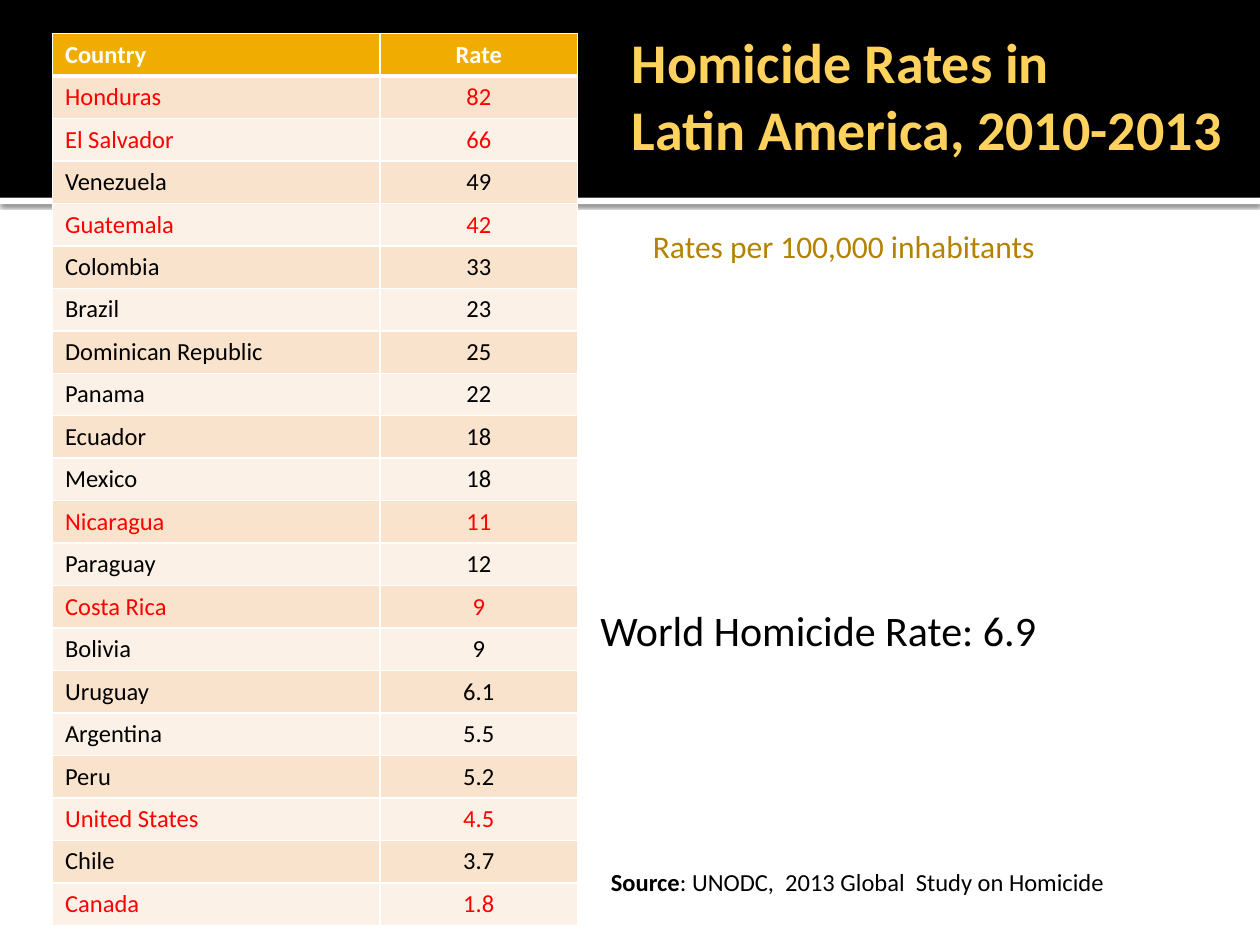
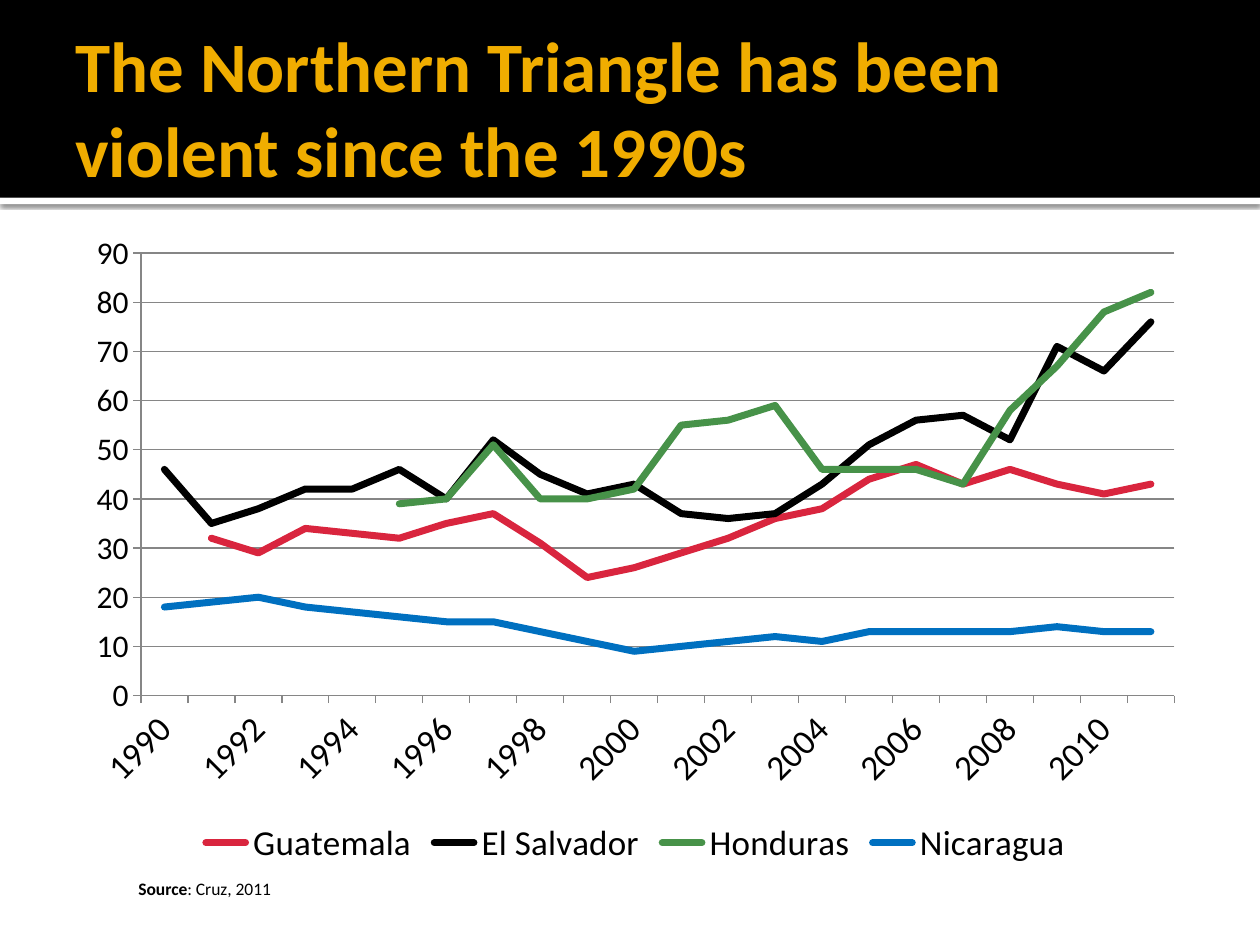
from lxml import etree
from pptx import Presentation
from pptx.chart.data import CategoryChartData
from pptx.dml.color import RGBColor
from pptx.enum.chart import XL_CHART_TYPE as ChartType, XL_LEGEND_POSITION as LegendPosition
from pptx.enum.chart import XL_TICK_MARK as TickMark
from pptx.enum.shapes import MSO_SHAPE as Shape
from pptx.enum.text import MSO_ANCHOR as Anchor, PP_ALIGN as Align
from pptx.oxml import parse_xml
from pptx.oxml.ns import nsdecls, qn
from pptx.util import Inches, Pt

# Shared look: the page is a grid of 120 columns by 90 rows
UNIT = Inches(10) / 120
FONT = "Calibri"
BLACK, WHITE, RED = "000000", "FFFFFF", "FF0000"
GOLD, LIGHT_GOLD, DARK_GOLD = "F0AD00", "FFD25D", "B48200"
ROW_TINTS = ("F9E3CC", "FCF1E7")
GRID_GREY = "868686"
BAND_ROWS = 18.84

RATES = [
    ("Honduras", "82"), ("El Salvador", "66"), ("Venezuela", "49"),
    ("Guatemala", "42"), ("Colombia", "33"), ("Brazil", "23"),
    ("Dominican Republic", "25"), ("Panama", "22"), ("Ecuador", "18"),
    ("Mexico", "18"), ("Nicaragua", "11"), ("Paraguay", "12"),
    ("Costa Rica", "9"), ("Bolivia", "9"), ("Uruguay", "6.1"),
    ("Argentina", "5.5"), ("Peru", "5.2"), ("United States", "4.5"),
    ("Chile", "3.7"), ("Canada", "1.8"),
]
HIGHLIGHTED = {"Honduras", "El Salvador", "Guatemala", "Nicaragua",
               "Costa Rica", "United States", "Canada"}

YEARS = range(1990, 2012)
TRENDS = [
    ("Guatemala", "D9253E", [None, 32, 29, 34, 33, 32, 35, 37, 31, 24, 26,
                             29, 32, 36, 38, 44, 47, 43, 46, 43, 41, 43]),
    ("El Salvador", BLACK, [46, 35, 38, 42, 42, 46, 40, 52, 45, 41, 43,
                            37, 36, 37, 43, 51, 56, 57, 52, 71, 66, 76]),
    ("Honduras", "479249", [None] * 5 + [39, 40, 51, 40, 40, 42, 55, 56, 59,
                                         46, 46, 46, 43, 58, 67, 78, 82]),
    ("Nicaragua", "0070C0", [18, 19, 20, 18, 17, 16, 15, 15, 13, 11, 9,
                             10, 11, 12, 11, 13, 13, 13, 13, 14, 13, 13]),
]


def color(value):
    return RGBColor.from_string(value)


def grid(*cells):
    return [round(cell * UNIT) for cell in cells]


def set_font(font, size, ink, bold=None):
    font.name, font.size = FONT, Pt(size)
    font.color.rgb = color(ink)
    if bold is not None:
        font.bold = bold


def add_bar(page, top, height, fill):
    bar = page.shapes.add_shape(Shape.RECTANGLE, *grid(0, top, 120, height))
    bar.fill.solid()
    bar.fill.fore_color.rgb = color(fill)
    bar.line.fill.background()
    bar.shadow.inherit = False
    return bar


def add_page(deck):
    """Blank page with the black title band and its shadowed white edge."""
    page = deck.slides.add_slide(deck.slide_layouts[6])
    edge = add_bar(page, BAND_ROWS, 0.6, WHITE)
    effects = edge._element.spPr.find(qn("a:effectLst"))
    effects.append(parse_xml(
        f'<a:outerShdw {nsdecls("a")} blurRad="{Pt(2.5)}" dist="{Pt(0.8)}" '
        f'dir="5400000" algn="tl" rotWithShape="0"><a:srgbClr val="{BLACK}">'
        '<a:alpha val="60000"/></a:srgbClr></a:outerShdw>'))
    add_bar(page, 0, BAND_ROWS, BLACK)
    return page


def add_text(page, cells, lines, size, ink=BLACK, bold=None, wrap=False):
    """Each line is a list of (words, bold) spans or one plain string."""
    box = page.shapes.add_textbox(*grid(*cells))
    frame = box.text_frame
    frame.word_wrap = wrap
    for number, line in enumerate(lines):
        para = frame.add_paragraph() if number else frame.paragraphs[0]
        set_font(para.font, size, ink, bold)
        spans = [(line, bold)] if isinstance(line, str) else line
        for words, weight in spans:
            span = para.add_run()
            span.text = words
            span.font.bold = weight
    return frame


def add_source(page, cells, words, size):
    add_text(page, cells, [[("Source", True), (f": {words}", False)]], size, wrap=True)


def set_borders(cell, top=1, bottom=1):
    properties = cell._tc.get_or_add_tcPr()
    for side, width in (("L", 1), ("R", 1), ("T", top), ("B", bottom)):
        properties.append(parse_xml(
            f'<a:ln{side} {nsdecls("a")} w="{Pt(width)}"><a:solidFill>'
            f'<a:srgbClr val="{WHITE}"/></a:solidFill></a:ln{side}>'))


def add_rate_table(page, cells, column_widths):
    rows = [("Country", "Rate")] + RATES
    table = page.shapes.add_table(len(rows), 2, *grid(*cells)).table
    for column, width in zip(table.columns, grid(*column_widths)):
        column.width = width
    for number, row in enumerate(rows):
        header = number == 0
        fill = GOLD if header else ROW_TINTS[(number - 1) % 2]
        ink = WHITE if header else RED if row[0] in HIGHLIGHTED else BLACK
        for index, words in enumerate(row):
            cell = table.cell(number, index)
            set_borders(cell, top=3 if number == 1 else 1, bottom=3 if header else 1)
            cell.fill.solid()
            cell.fill.fore_color.rgb = color(fill)
            cell.text = words
            para = cell.text_frame.paragraphs[0]
            para.alignment = Align.CENTER if index else Align.LEFT
            set_font(para.font, 14, ink, header)


def style_axis(axis, size):
    set_font(axis.tick_labels.font, size, BLACK)
    axis.major_tick_mark = TickMark.OUTSIDE
    axis.minor_tick_mark = TickMark.NONE
    axis.format.line.color.rgb = color(GRID_GREY)
    axis.format.line.width = Pt(0.75)


def place_plot(chart, **shares):
    """Fix the inner plot area, as shares of the chart."""
    area = chart._chartSpace.chart.plotArea
    for old in area.findall(qn("c:layout")):
        area.remove(old)
    layout = etree.Element(qn("c:layout"))
    manual = etree.SubElement(layout, qn("c:manualLayout"))
    settings = {"layoutTarget": "inner", "xMode": "edge", "yMode": "edge", **shares}
    for name, value in settings.items():
        etree.SubElement(manual, qn(f"c:{name}")).set("val", str(value))
    area.insert(0, layout)


def add_trend_chart(page, cells):
    data = CategoryChartData()
    data.categories = [str(year) for year in YEARS]
    for name, _, values in TRENDS:
        data.add_series(name, values)
    chart = page.shapes.add_chart(ChartType.LINE, *grid(*cells), data).chart
    set_font(chart.font, 10, BLACK)
    chart.has_title = False
    chart.has_legend = True
    chart.legend.position = LegendPosition.BOTTOM
    chart.legend.include_in_layout = False
    set_font(chart.legend.font, 20, BLACK)

    # Lines
    chart.plots[0].vary_by_categories = False
    for series, (_, ink, _) in zip(chart.plots[0].series, TRENDS):
        series.smooth = False
        line = series.format.line
        line.color.rgb = color(ink)
        line.width = Pt(4)
        series._element.spPr.find(qn("a:ln")).set("cap", "rnd")

    # Axes: slanted labels for every second year
    years, rates = chart.category_axis, chart.value_axis
    style_axis(years, 20)
    style_axis(rates, 18)
    years._element.find(f"{qn('c:txPr')}/{qn('a:bodyPr')}").set("rot", "-2700000")
    skip = etree.Element(qn("c:tickLblSkip"))
    skip.set("val", "2")
    years._element.find(qn("c:noMultiLvlLbl")).addprevious(skip)
    rates.minimum_scale, rates.maximum_scale, rates.major_unit = 0, 90, 10
    rates.has_major_gridlines = True
    rates.major_gridlines.format.line.color.rgb = color(GRID_GREY)
    rates.major_gridlines.format.line.width = Pt(0.75)
    place_plot(chart, x=0.06, y=0.05, w=0.92, h=0.68)


def add_rates_page(deck):
    page = add_page(deck)
    add_rate_table(page, (5, 3.2, 50, 84), (31.2, 18.8))
    add_text(page, (56, 57, 45, 6), ["World Homicide Rate: 6.9"], 24)
    add_text(page, (59, 2, 60.6, 14.2),
             ["Homicide Rates in", "Latin America, 2010-2013"], 32, LIGHT_GOLD, True)
    add_source(page, (57, 82, 56, 4), "UNODC,  2013 Global  Study on Homicide", 14)
    add_text(page, (61, 21, 39.5, 4.8), ["Rates per 100,000 inhabitants"], 18, DARK_GOLD)


def add_trend_page(deck):
    page = add_page(deck)
    title = add_text(page, (6, 2, 108, 16.4),
                     ["The Northern Triangle has been violent since the 1990s"],
                     40.5, GOLD, True, wrap=True)
    title.vertical_anchor = Anchor.MIDDLE
    title.margin_right = Inches(0.05)
    add_trend_chart(page, (7, 21, 107, 62))
    add_source(page, (12, 83, 60, 3.2), "Cruz, 2011", 10)


def main():
    deck = Presentation()
    deck.slide_width, deck.slide_height = grid(120, 90)
    add_rates_page(deck)
    add_trend_page(deck)
    deck.save("out.pptx")


if __name__ == "__main__":
    main()
